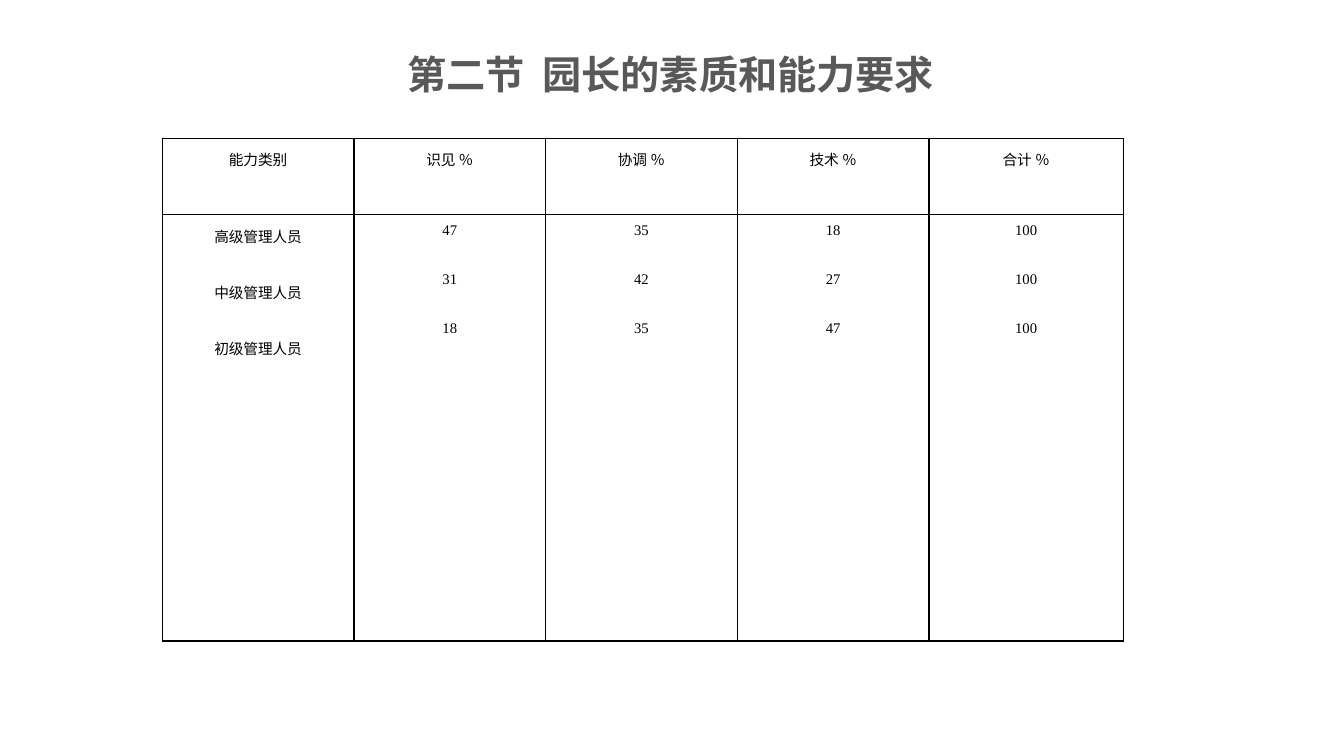
from lxml.etree import SubElement
from pptx import Presentation
from pptx.dml.color import RGBColor
from pptx.enum.text import MSO_ANCHOR, PP_ALIGN
from pptx.oxml.ns import qn
from pptx.util import Cm, Pt

THEME = {
    "title": {"name": "Noto Sans CJK SC", "size": Pt(28), "bold": True, "color": "595959"},
    "cell": {"name": "Times New Roman", "size": Pt(10.5), "bold": False, "color": "000000"},
    "east_asian": "Noto Sans CJK SC",
    "border": {"color": "000000", "width": Pt(1)},
}

HEADERS = ["能力类别", "识见 ％", "协调 ％", "技术 ％", "合计 ％"]
STAFF = [
    ["高级管理人员", "47", "35", "18", "100"],
    ["中级管理人员", "31", "42", "27", "100"],
    ["初级管理人员", "18", "35", "47", "100"],
]


def apply(obj, values):
    for name, value in values.items():
        setattr(obj, name, value)


def write(tf, lines, look, para):
    for i, line in enumerate(lines):
        p = tf.add_paragraph() if i else tf.paragraphs[0]
        apply(p, para)
        p.space_before = Pt(17.5 if i else 0)
        r = p.add_run()
        r.text = line
        apply(r.font, {k: v for k, v in look.items() if k != "color"})
        r.font.color.rgb = RGBColor.from_string(look["color"])
        SubElement(r.font._element, qn("a:ea"), typeface=THEME["east_asian"])


prs = Presentation()
apply(prs, {"slide_width": Cm(33.87), "slide_height": Cm(19.05)})
s = prs.slides.add_slide(prs.slide_layouts[6])

title = s.shapes.add_textbox(Cm(0.86), Cm(1.14), Cm(32.08), Cm(1.6))
apply(title.text_frame, {"word_wrap": True, "vertical_anchor": MSO_ANCHOR.MIDDLE})
write(title.text_frame, ["第二节  园长的素质和能力要求"], THEME["title"],
      {"alignment": PP_ALIGN.CENTER, "line_spacing": 0.9})

widths = [Cm(4.83)] * 4 + [Cm(4.9)]
heights = [Cm(1.93), Cm(10.74)]
table = s.shapes.add_table(len(heights), len(widths), Cm(4.09), Cm(3.48),
                           sum(widths), sum(heights)).table
apply(table, {"first_row": False, "horz_banding": False})
for column, width in zip(table.columns, widths):
    column.width = width
for row, height in zip(table.rows, heights):
    row.height = height

body = zip(*STAFF)
columns = [([header], lines) for header, lines in zip(HEADERS, body)]
for c, blocks in enumerate(columns):
    for r, lines in enumerate(blocks):
        cell = table.cell(r, c)
        apply(cell, {"margin_left": Cm(0.18), "margin_right": Cm(0.18),
                     "margin_top": 0, "margin_bottom": 0,
                     "vertical_anchor": MSO_ANCHOR.TOP})
        write(cell.text_frame, lines, THEME["cell"],
              {"alignment": PP_ALIGN.CENTER, "line_spacing": 1.5})
        tc_pr = cell._tc.get_or_add_tcPr()
        for side in ("lnL", "lnR", "lnT", "lnB"):
            ln = SubElement(tc_pr, qn(f"a:{side}"), w=str(THEME["border"]["width"]))
            fill = SubElement(ln, qn("a:solidFill"))
            SubElement(fill, qn("a:srgbClr"), val=THEME["border"]["color"])
        cell.fill.background()

prs.save("out.pptx")
